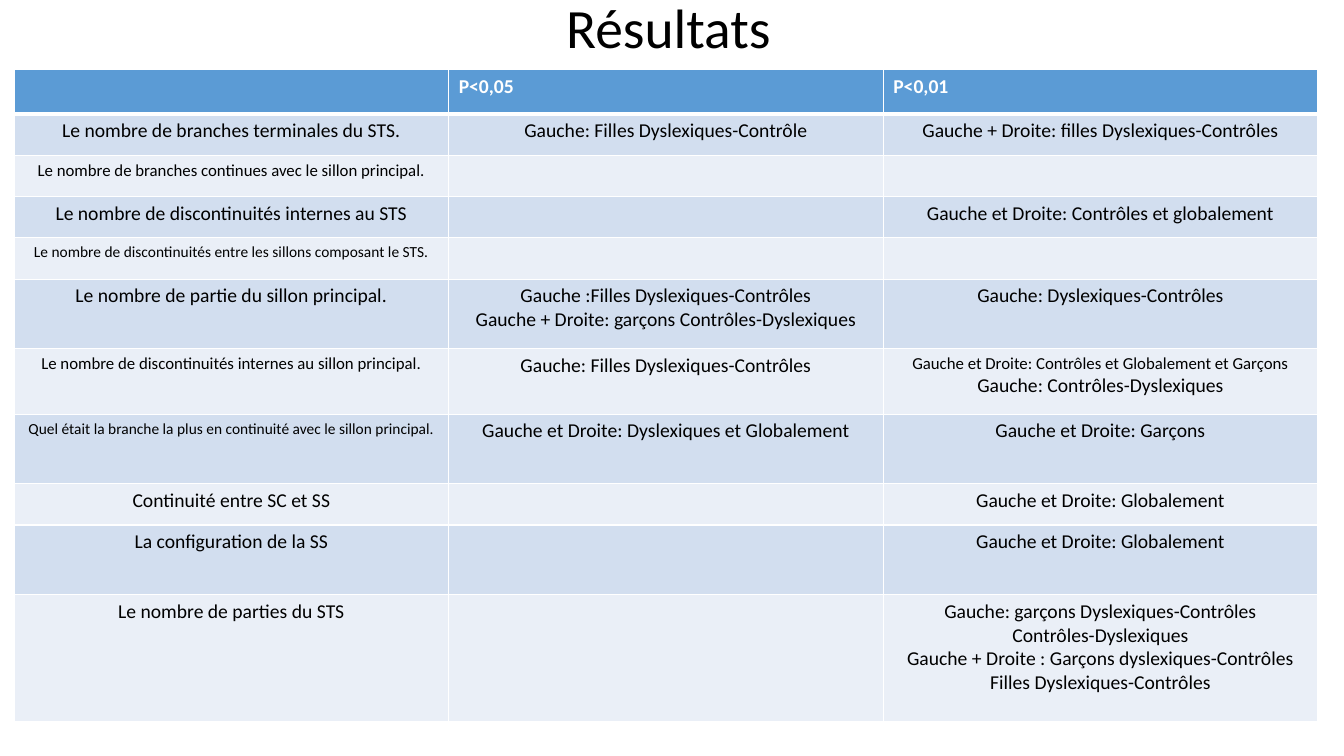
from lxml.etree import SubElement
from pptx import Presentation
from pptx.dml.color import RGBColor
from pptx.enum.text import MSO_ANCHOR, PP_ALIGN
from pptx.oxml.ns import qn
from pptx.util import Inches, Pt

TITLE = "Résultats"
HEADER = ["", "P<0,05", "P<0,01"]
ROWS = [
    (0.41, "Le nombre de branches terminales du STS.",
     ["Gauche: Filles Dyslexiques-Contrôle"],
     ["Gauche + Droite: filles Dyslexiques-Contrôles"]),
    (0.41, "Le nombre de branches continues avec le sillon principal.", [], []),
    (0.41, "Le nombre de discontinuités internes au STS", [],
     ["Gauche et Droite: Contrôles et globalement"]),
    (0.41, "Le nombre de discontinuités entre les sillons composant le STS.", [], []),
    (0.69, "Le nombre de partie du sillon principal.",
     ["Gauche :Filles Dyslexiques-Contrôles",
      "Gauche + Droite: garçons Contrôles-Dyslexiques"],
     ["Gauche: Dyslexiques-Contrôles"]),
    (0.65, "Le nombre de discontinuités internes au sillon principal.",
     ["Gauche: Filles Dyslexiques-Contrôles"],
     ["Gauche et Droite: Contrôles et Globalement et Garçons",
      "Gauche: Contrôles-Dyslexiques"]),
    (0.69, "Quel était la branche la plus en continuité avec le sillon principal.",
     ["Gauche et Droite: Dyslexiques et Globalement"],
     ["Gauche et Droite: Garçons"]),
    (0.41, "Continuité entre SC et SS", [], ["Gauche et Droite: Globalement"]),
    (0.69, "La configuration de la SS", [], ["Gauche et Droite: Globalement"]),
    (1.26, "Le nombre de parties du STS", [],
     ["Gauche: garçons Dyslexiques-Contrôles", "Contrôles-Dyslexiques",
      "Gauche + Droite : Garçons dyslexiques-Contrôles",
      "Filles Dyslexiques-Contrôles"]),
]
HEADER_H = 0.44
COL_W = 4.31
FONT = "Calibri"
BLACK = RGBColor(0x00, 0x00, 0x00)
WHITE = RGBColor(0xFF, 0xFF, 0xFF)
BLUE = RGBColor(0x5B, 0x9B, 0xD5)
BANDS = [RGBColor(0xD2, 0xDE, 0xEF), RGBColor(0xEA, 0xEF, 0xF7)]


def text_size(line):
    if len(line) > 60:
        return 11
    return 12 if len(line) > 50 else 14


def write(tf, lines, size_of, color, align, bold=False):
    for i, line in enumerate(lines):
        p = tf.add_paragraph() if i else tf.paragraphs[0]
        p.alignment = align
        if line:
            r = p.add_run()
            r.text = line
            r.font.name = FONT
            r.font.size = Pt(size_of(line))
            r.font.bold = bold
            r.font.color.rgb = color


def paint(cell, fill, bottom=1):
    tc_pr = cell._tc.get_or_add_tcPr()
    for side, width in (("L", 1), ("R", 1), ("T", 1), ("B", bottom)):
        ln = SubElement(tc_pr, qn("a:ln" + side), w=str(Pt(width)))
        solid = SubElement(ln, qn("a:solidFill"))
        SubElement(solid, qn("a:srgbClr"), val=str(WHITE))
    cell.fill.solid()
    cell.fill.fore_color.rgb = fill


prs = Presentation()
prs.slide_width, prs.slide_height = Inches(13.33), Inches(7.5)
s = prs.slides.add_slide(prs.slide_layouts[6])

tf = s.shapes.add_textbox(Inches(0.88), 0, Inches(11.5), Inches(0.61)).text_frame
tf.word_wrap = True
tf.vertical_anchor = MSO_ANCHOR.MIDDLE
write(tf, [TITLE], lambda line: 39.6, BLACK, PP_ALIGN.CENTER)
tf.paragraphs[0].line_spacing = 0.9

heights = [HEADER_H] + [row[0] for row in ROWS]
table = s.shapes.add_table(len(heights), len(HEADER), Inches(0.14), Inches(0.69),
                           Inches(COL_W * len(HEADER)), Inches(sum(heights))).table
for col in table.columns:
    col.width = Inches(COL_W)
for row, height in zip(table.rows, heights):
    row.height = Inches(height)

for c, label in enumerate(HEADER):
    cell = table.cell(0, c)
    write(cell.text_frame, [label], text_size, WHITE, PP_ALIGN.LEFT, bold=True)
    paint(cell, BLUE, bottom=3)

for i, (_, measure, p05, p01) in enumerate(ROWS):
    for c, lines in enumerate(([measure], p05, p01)):
        cell = table.cell(i + 1, c)
        write(cell.text_frame, lines, text_size, BLACK, PP_ALIGN.CENTER)
        paint(cell, BANDS[i % 2])
        if i == 0:
            top = cell._tc.tcPr.find(qn("a:lnT"))
            top.set("w", str(Pt(3)))

prs.save("out.pptx")
